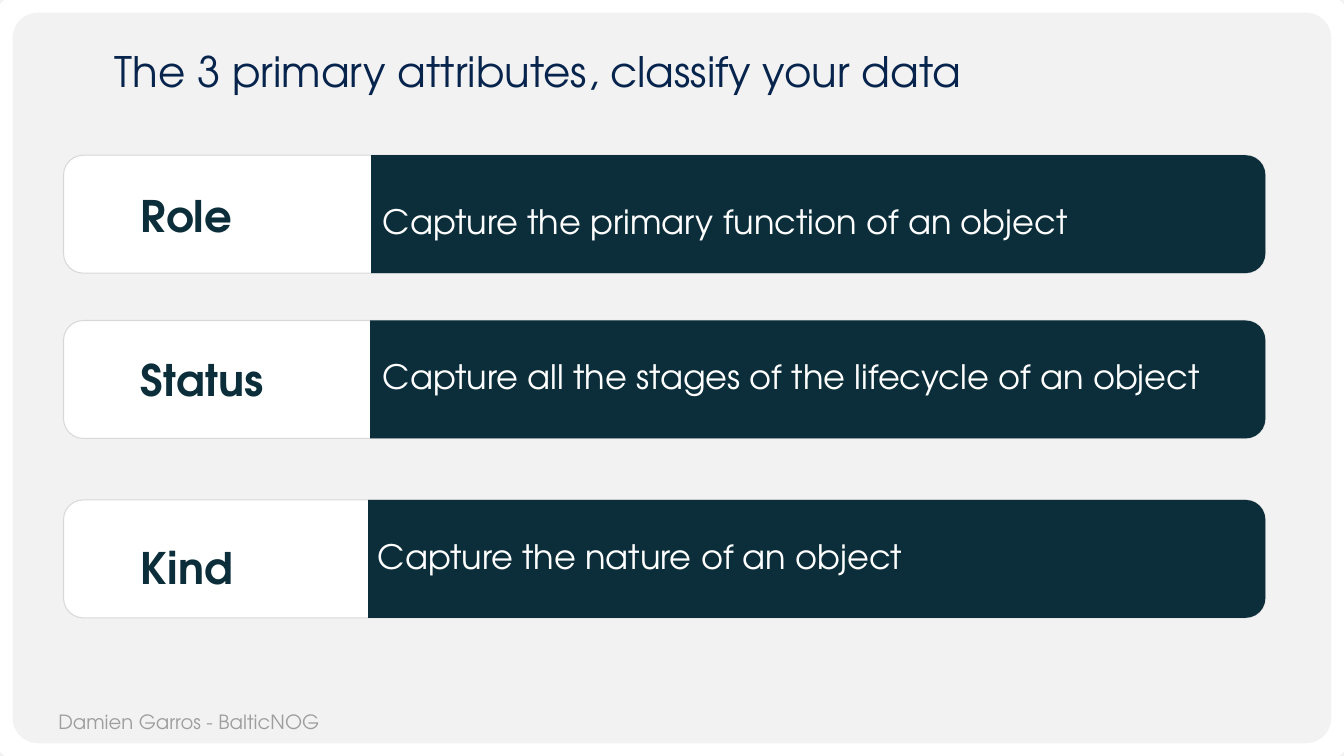
from dataclasses import dataclass

from pptx import Presentation
from pptx.dml.color import RGBColor
from pptx.enum.shapes import MSO_SHAPE
from pptx.enum.text import MSO_ANCHOR, MSO_AUTO_SIZE, PP_ALIGN
from pptx.util import Pt

SCALE = 9144  # EMU per px, 100 px to the inch
PAGE_WIDTH, PAGE_HEIGHT = 1333, 750


@dataclass(frozen=True)
class Theme:
    font: str = "TeX Gyre Adventor"
    background: str = "F2F2F2"
    white: str = "FFFFFF"
    border: str = "D8D8D8"
    dark: str = "0C2E3A"
    navy: str = "07244D"
    grey: str = "9E9E9E"
    title_size: int = 30
    label_size: int = 31
    body_size: int = 24
    footer_size: int = 14


class SlideBuilder:
    def __init__(self, page, theme):
        self.page = page
        self.theme = theme
        page.background.fill.solid()
        page.background.fill.fore_color.rgb = RGBColor.from_string(theme.background)

    def shape(self, kind, area, corners, fill=None, line=None, line_width=0.75, rotation=0):
        box = self.page.shapes.add_shape(kind, *(value * SCALE for value in area))
        box.shadow.inherit = False
        box.rotation = rotation
        for index, corner in enumerate(corners):
            box.adjustments[index] = corner
        if fill:
            box.fill.solid()
            box.fill.fore_color.rgb = RGBColor.from_string(fill)
        else:
            box.fill.background()
        if line:
            box.line.color.rgb = RGBColor.from_string(line)
            box.line.width = Pt(line_width)
        else:
            box.line.fill.background()
        return box

    def right_panel(self, left, top, right, height):
        # Top-rounded shape turned a quarter, so that its right corners are round
        width = right - left
        box = self.shape(MSO_SHAPE.ROUND_2_SAME_RECTANGLE, (left, top, height, width),
                         (0.167, 0), self.theme.dark, rotation=90)
        shift = (width - height) * SCALE // 2
        box.left += shift
        box.top -= shift

    def set_text(self, box, words, size, color, bold=False, anchor=MSO_ANCHOR.TOP, spacing=None):
        frame = box.text_frame
        frame.word_wrap = True
        frame.auto_size = MSO_AUTO_SIZE.NONE
        frame.vertical_anchor = anchor
        frame.margin_left = frame.margin_right = 10 * SCALE
        frame.margin_top = frame.margin_bottom = 10 * SCALE
        para = frame.paragraphs[0]
        para.alignment = PP_ALIGN.LEFT
        if spacing:
            para.line_spacing = spacing
        span = para.add_run()
        span.text = words
        span.font.name = self.theme.font
        span.font.size = Pt(size)
        span.font.bold = bold
        span.font.color.rgb = RGBColor.from_string(color)

    def text(self, area, words, size, color, **style):
        box = self.page.shapes.add_textbox(*(value * SCALE for value in area))
        self.set_text(box, words, size, color, **style)

    def title(self, area, words):
        box = self.page.shapes.title
        box.left, box.top, box.width, box.height = (value * SCALE for value in area)
        self.set_text(box, words, self.theme.title_size, self.theme.navy, spacing=0.8)


def main():
    deck = Presentation()
    deck.slide_width, deck.slide_height = PAGE_WIDTH * SCALE, PAGE_HEIGHT * SCALE
    theme = Theme()
    slide = SlideBuilder(deck.slides.add_slide(deck.slide_layouts[5]), theme)

    # Page frame, footer and title
    slide.shape(MSO_SHAPE.ROUNDED_RECTANGLE, (0, 0, PAGE_WIDTH, PAGE_HEIGHT), (0.05,),
                line=theme.white, line_width=18)
    slide.text((48, 694, 647, 44), "Damien Garros - BalticNOG", theme.footer_size, theme.grey)
    slide.title((104, 45, 1177, 65), "The 3 primary attributes, classify your data")

    # Attribute rows: card top, panel left, label and description with their areas
    top, middle = MSO_ANCHOR.TOP, MSO_ANCHOR.MIDDLE
    rows = [
        (154, 368, "Role", (130, 178, 223, 72), top,
         "Capture the primary function of an object", (370, 189, 880, 61), top),
        (318, 367, "Status", (130, 321, 223, 111), middle,
         "Capture all the stages of the lifecycle of an object", (370, 343, 880, 61), top),
        (496, 365, "Kind", (130, 527, 223, 72), top,
         "Capture the nature of an object", (365, 512, 880, 79), middle),
    ]
    card_left, card_width, card_height = 63, 1192, 117
    for (card_top, panel_left, label, label_area, label_anchor,
         description, description_area, description_anchor) in rows:
        slide.shape(MSO_SHAPE.ROUNDED_RECTANGLE, (card_left, card_top, card_width, card_height),
                    (0.167,), theme.white, theme.border)
        slide.right_panel(panel_left, card_top, card_left + card_width, card_height)
        slide.text(label_area, label, theme.label_size, theme.dark,
                   bold=True, anchor=label_anchor)
        slide.text(description_area, description, theme.body_size, theme.white,
                   anchor=description_anchor)

    deck.save("out.pptx")


if __name__ == "__main__":
    main()
